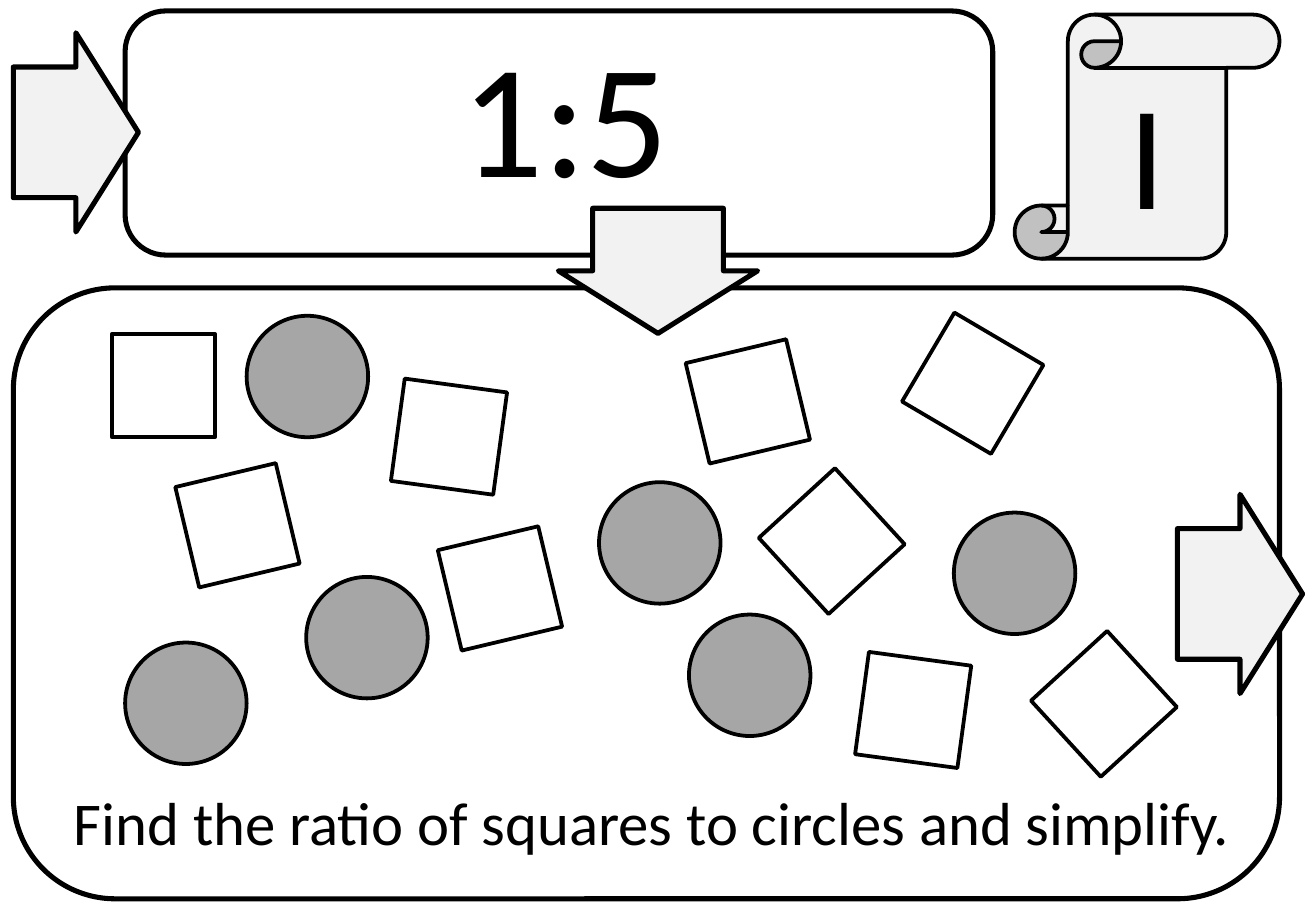
"""Build a ratio puzzle card with squares, circles and direction arrows."""
from dataclasses import dataclass

from pptx import Presentation
from pptx.dml.color import RGBColor
from pptx.enum.shapes import MSO_SHAPE
from pptx.enum.text import MSO_ANCHOR, MSO_AUTO_SIZE, PP_ALIGN
from pptx.util import Inches, Pt

PANEL = MSO_SHAPE.ROUNDED_RECTANGLE
ARROW = MSO_SHAPE.RIGHT_ARROW
SCROLL = MSO_SHAPE.VERTICAL_SCROLL
SQUARE = MSO_SHAPE.RECTANGLE
CIRCLE = MSO_SHAPE.OVAL
MIDDLE = MSO_ANCHOR.MIDDLE
GROW = MSO_AUTO_SIZE.SHAPE_TO_FIT_TEXT
CENTER = PP_ALIGN.CENTER
LEFT = PP_ALIGN.LEFT


@dataclass(frozen=True)
class Theme:
    font: str = "Calibri"
    ink: str = "000000"
    pale: str = "F2F2F2"
    grey: str = "A6A6A6"
    thick: float = 3
    thin: float = 2.25
    question_size: int = 36
    letter_size: int = 88
    answer_size: int = 96


THEME = Theme()
SQUARE_SIDE = 0.85
CIRCLE_SIDE = 1
ARROW_SIZE = (1.03, 1.64)

PANELS = [(0.11, 2.37, 10.42, 5.03), (1.03, 0.09, 7.14, 2.01)]
ARROWS = [(9.69, 4.07, 0), (4.9, 1.41, 90), (0.11, 0.27, 0)]
SQUARES = [
    (0.92, 2.75, 0),
    (3.27, 3.17, 7.7),
    (1.53, 3.9, 346.6),
    (3.69, 4.42, 346.6),
    (7.09, 5.42, 7.7),
    (5.73, 2.88, 346.6),
    (8.66, 5.37, 317.5),
    (7.58, 2.73, 300.5),
    (6.42, 4.03, 317.5),
]
CIRCLES = [
    (7.85, 4.22),
    (2.03, 2.6),
    (5.67, 5.06),
    (1.03, 5.29),
    (2.52, 4.75),
    (4.93, 3.97),
]


def add_outlined(page, kind, place, weight, fill=None, rotation=0):
    """Add a black-outlined preset shape, filled only when a colour is given."""
    shape = page.shapes.add_shape(kind, *map(Inches, place))
    shape.shadow.inherit = False
    shape.rotation = rotation
    shape.line.color.rgb = RGBColor.from_string(THEME.ink)
    shape.line.width = Pt(weight)
    if fill:
        shape.fill.solid()
        shape.fill.fore_color.rgb = RGBColor.from_string(fill)
    else:
        shape.fill.background()
    return shape


def set_text(box, text, size, align):
    """Write one formatted line into a shape or text box."""
    para = box.text_frame.paragraphs[0]
    para.text = text
    para.alignment = align
    font = para.runs[0].font
    font.name = THEME.font
    font.size = Pt(size)
    font.color.rgb = RGBColor.from_string(THEME.ink)


def add_label(page, place, text, size):
    """Add a single-line text box that grows with its text."""
    box = page.shapes.add_textbox(*map(Inches, place))
    box.text_frame.word_wrap = False
    box.text_frame.auto_size = GROW
    set_text(box, text, size, LEFT)


def add_arrow(page, left, top, rotation):
    """Add a pale block arrow."""
    arrow = add_outlined(page, ARROW, (left, top, *ARROW_SIZE),
                         THEME.thick, THEME.pale, rotation)
    arrow.adjustments[0] = 0.656
    arrow.adjustments[1] = 0.5


def add_scroll(page, place, letter):
    """Add the scroll that carries the card letter."""
    scroll = add_outlined(page, SCROLL, place, THEME.thin, THEME.pale)
    scroll.adjustments[0] = 0.218
    scroll.text_frame.vertical_anchor = MIDDLE
    set_text(scroll, letter, THEME.letter_size, CENTER)


def main():
    """Assemble and save the card."""
    deck = Presentation()
    deck.slide_width = Inches(10.83)
    deck.slide_height = Inches(7.5)
    page = deck.slides.add_slide(deck.slide_layouts[6])

    for place in PANELS:
        add_outlined(page, PANEL, place, THEME.thick)
    for left, top, rotation in ARROWS:
        add_arrow(page, left, top, rotation)
    add_scroll(page, (8.35, 0.12, 2.18, 2.01), "I")
    for left, top, rotation in SQUARES:
        add_outlined(page, SQUARE, (left, top, SQUARE_SIDE, SQUARE_SIDE),
                     THEME.thin, rotation=rotation)
    for left, top in CIRCLES:
        add_outlined(page, CIRCLE, (left, top, CIRCLE_SIDE, CIRCLE_SIDE),
                     THEME.thin, THEME.grey)
    add_label(page, (0.51, 6.41, 9.8, 0.71),
              "Find the ratio of squares to circles and simplify.",
              THEME.question_size)
    add_label(page, (3.7, 0.08, 1.93, 1.72), "1:5", THEME.answer_size)
    deck.save("out.pptx")


if __name__ == "__main__":
    main()
